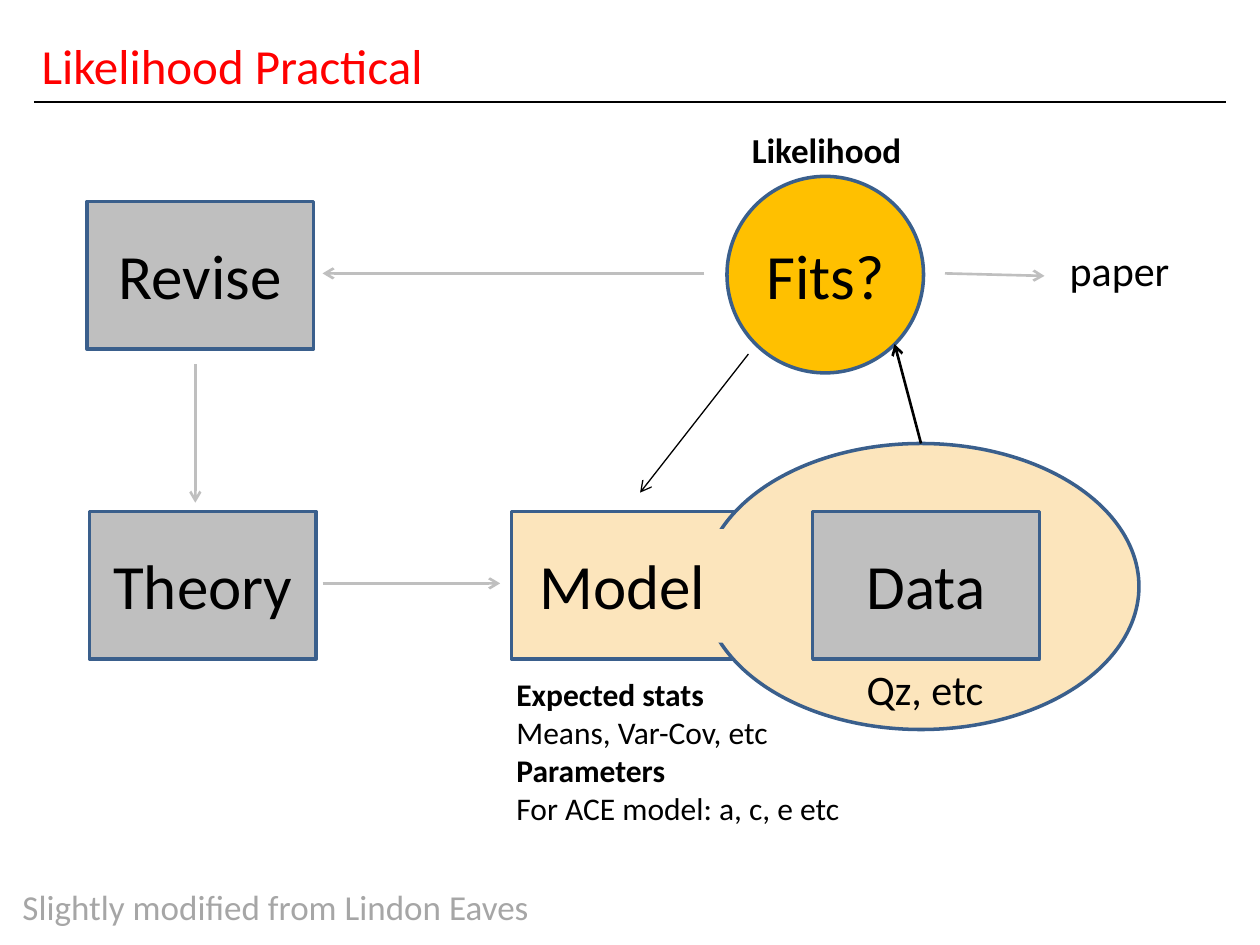
from lxml import etree
from pptx import Presentation
from pptx.dml.color import RGBColor
from pptx.enum.shapes import MSO_CONNECTOR, MSO_SHAPE
from pptx.enum.text import MSO_ANCHOR, PP_ALIGN
from pptx.oxml.ns import qn
from pptx.util import Inches, Pt

COLORS = {
    "title": "FF0000",
    "ink": "000000",
    "outline": "3A5F8C",
    "gray": "BFBFBF",
    "cream": "FCE5BC",
    "gold": "FFC000",
    "credit": "A6A6A6",
}
FONT = "Calibri"
BOX_W, BOX_H = 1.8, 1.17
LABEL_W, LABEL_H = 1.95, 0.71


def rgb(name):
    return RGBColor.from_string(COLORS[name])


def style(paragraph, size, color="ink", bold=False, align=PP_ALIGN.LEFT):
    paragraph.alignment = align
    font = paragraph.font
    font.name, font.size, font.bold = FONT, Pt(size), bold
    font.color.rgb = rgb(color)


def add_text(slide, box, lines, size, color="ink", align=PP_ALIGN.LEFT):
    """Write (text, bold) lines, one paragraph each."""
    frame = slide.shapes.add_textbox(*map(Inches, box)).text_frame
    frame.word_wrap = True
    for i, (text, bold) in enumerate(lines):
        paragraph = frame.add_paragraph() if i else frame.paragraphs[0]
        paragraph.text = text
        style(paragraph, size, color, bold, align)


def add_block(slide, kind, box, fill, outlined=True):
    block = slide.shapes.add_shape(kind, *map(Inches, box))
    block.shadow.inherit = False
    block.fill.solid()
    block.fill.fore_color.rgb = rgb(fill)
    if outlined:
        block.line.color.rgb = rgb("outline")
        block.line.width = Pt(2)
    else:
        block.line.fill.background()
    return block


def add_line(slide, start, end, color="gray", width=1.5, arrow=True):
    line = slide.shapes.add_connector(
        MSO_CONNECTOR.STRAIGHT, *map(Inches, (*start, *end)))
    line.line.color.rgb = rgb(color)
    line.line.width = Pt(width)
    if arrow:
        etree.SubElement(line.get_or_add_ln(), qn("a:tailEnd"), type="arrow")
    etree.SubElement(line._element.spPr, qn("a:effectLst"))
    return line


def add_label(slide, box, text):
    """Center a large label on a box."""
    left, top, width, height = box
    label_box = (left + (width - LABEL_W) / 2, top + (height - LABEL_H) / 2,
                 LABEL_W, LABEL_H)
    add_text(slide, label_box, [(text, False)], 36, align=PP_ALIGN.CENTER)


def add_stage(slide, left, top, text):
    box = (left, top, BOX_W, BOX_H)
    add_block(slide, MSO_SHAPE.RECTANGLE, box, "gray")
    add_label(slide, box, text)


def add_heading(slide, left, top, width, height):
    title = slide.shapes.title
    title.left, title.top = Inches(left), Inches(top)
    title.width, title.height = Inches(width), Inches(height)
    frame = title.text_frame
    frame.text = "Likelihood Practical"
    frame.vertical_anchor = MSO_ANCHOR.MIDDLE
    style(frame.paragraphs[0], 28, "title")
    rule_y = top + height + 0.01
    add_line(slide, (0.27, rule_y), (9.73, rule_y), "ink", 0.75, arrow=False)


def add_model_and_data(slide, left, top):
    """Draw the model box merged into the ellipse around the data box."""
    model = (left, top, BOX_W, BOX_H)
    add_block(slide, MSO_SHAPE.RECTANGLE, model, "cream")
    ellipse = add_block(slide, MSO_SHAPE.OVAL,
                        (left + 1.52, top - 0.54, 3.46, 2.27), "cream")
    add_block(slide, MSO_SHAPE.RECTANGLE,
              (left + 0.07, top + 0.14, BOX_W, 0.9), "cream", outlined=False)
    add_label(slide, (left - 0.02, top, BOX_W, BOX_H), "Model")
    add_stage(slide, left + 2.39, top, "Data")
    add_text(slide, (left + 2.72, top + 1.16, 1.56, 0.5), [("Qz, etc", False)], 24)
    add_text(slide, (left - 0.06, top + 1.25, 3.11, 1.31), [
        ("Expected stats", True),
        ("Means, Var-Cov, etc", False),
        ("Parameters", True),
        ("For ACE model: a, c, e etc", False),
    ], 18)
    return ellipse


def add_fit_check(slide, left, top, size):
    circle = (left, top, size, size)
    add_block(slide, MSO_SHAPE.OVAL, circle, "gold")
    add_label(slide, circle, "Fits?")
    add_text(slide, (left - 0.38, top - 0.43, 2.34, 0.44), [("Likelihood", True)],
             20, align=PP_ALIGN.CENTER)
    add_text(slide, (left + 2.14, top + 0.49, 1.95, 0.5), [("paper", False)],
             24, align=PP_ALIGN.CENTER)


def add_flow(slide, ellipse):
    add_line(slide, (2.56, 4.63), (3.97, 4.63))
    add_line(slide, (5.59, 2.17), (2.56, 2.17))
    add_line(slide, (1.55, 2.89), (1.55, 3.99))
    add_line(slide, (7.5, 2.17), (8.29, 2.19))
    add_line(slide, (5.94, 2.81), (5.08, 3.91), "ink", 0.75)
    data_to_fit = add_line(slide, (7.31, 3.52), (7.1, 2.73), "ink")
    data_to_fit.begin_connect(ellipse, 0)


def main():
    prs = Presentation()
    prs.slide_width, prs.slide_height = Inches(10), Inches(7.5)
    slide = prs.slides.add_slide(prs.slide_layouts.get_by_name("Title Only"))

    add_heading(slide, 0.23, 0.23, 8.83, 0.57)
    ellipse = add_model_and_data(slide, 4.06, 4.06)
    add_stage(slide, 0.71, 4.06, "Theory")
    add_stage(slide, 0.69, 1.6, "Revise")
    add_fit_check(slide, 5.77, 1.4, 1.56)
    add_flow(slide, ellipse)
    add_text(slide, (0.08, 6.98, 4.92, 0.44),
             [("Slightly modified from Lindon Eaves", False)], 20, "credit")

    prs.save("out.pptx")


if __name__ == "__main__":
    main()
